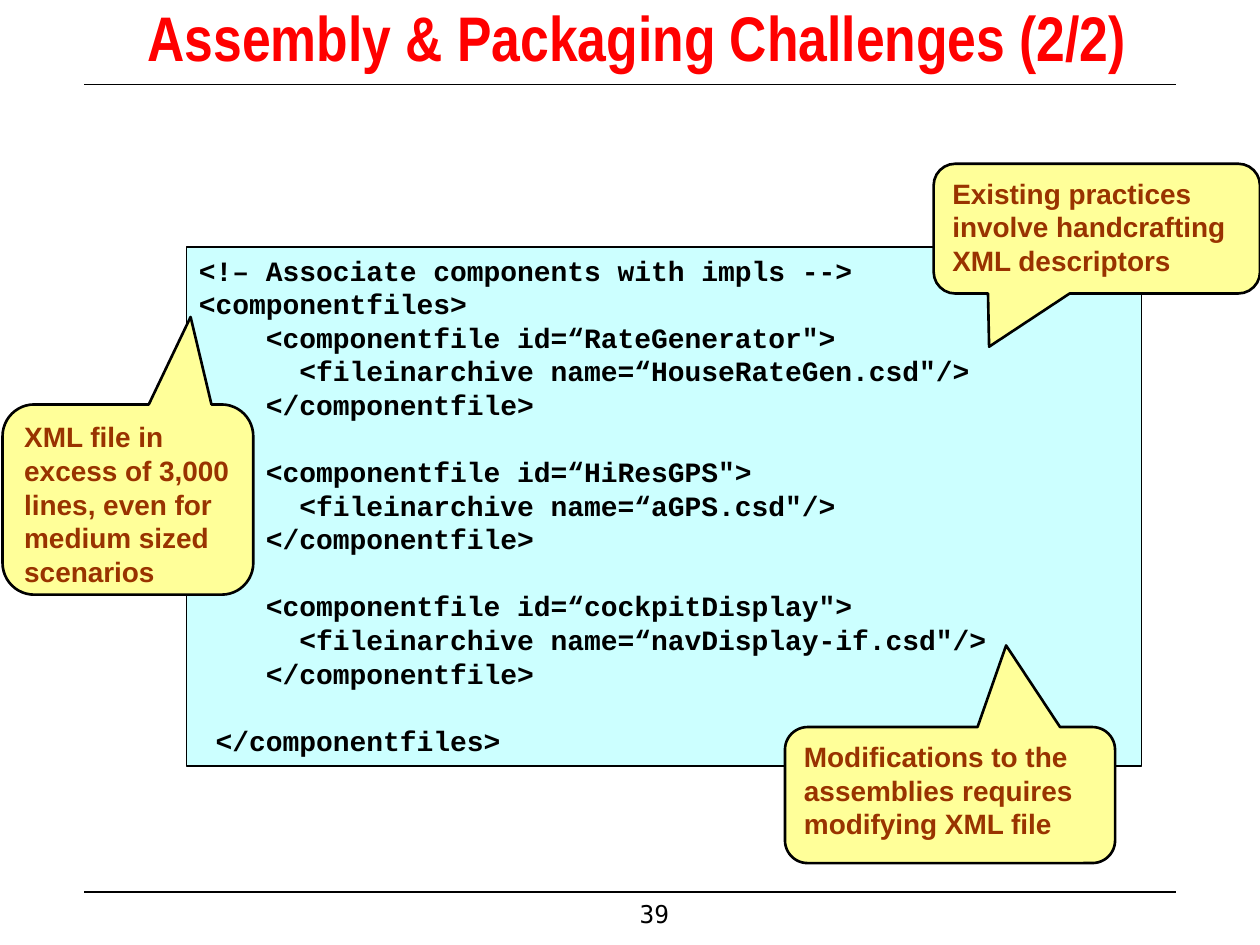
from copy import deepcopy

from lxml import etree
from pptx import Presentation
from pptx import util as u
from pptx.dml.color import RGBColor
from pptx.enum import shapes, text
from pptx.oxml.ns import qn

COLORS = {
    "title": "FF0000",
    "ink": "000000",
    "code_fill": "CCFFFF",
    "note_fill": "FFFF99",
    "note_text": "993300",
}
TITLE = "Assembly & Packaging Challenges (2/2)"
PAGE = "39"
CODE = """<!– Associate components with impls -->
<componentfiles>
    <componentfile id=“RateGenerator">
      <fileinarchive name=“HouseRateGen.csd"/>
    </componentfile>

    <componentfile id=“HiResGPS">
      <fileinarchive name=“aGPS.csd"/>
    </componentfile>

    <componentfile id=“cockpitDisplay">
      <fileinarchive name=“navDisplay-if.csd"/>
    </componentfile>

 </componentfiles>"""
CALLOUTS = [
    ("XML file in excess of 3,000 lines, even for medium sized scenarios",
     (0.02, 3.21, 1.99, 1.51), (0.25, -0.96)),
    ("Existing practices involve handcrafting XML descriptors",
     (7.41, 1.3, 2.59, 1.03), (-0.33, 0.91)),
    ("Modifications to the assemblies requires modifying XML file",
     (6.23, 5.77, 2.62, 1.08), (0.17, -1.1)),
]
RULES = (0.67, 7.08)
RULE_ENDS = (0.67, 9.33)


def rgb(name):
    return RGBColor.from_string(COLORS[name])


def inches(values):
    return [u.Inches(v) for v in values]


def write(sp, content, font="Arial", size=16, color="ink", bold=True,
          align=text.PP_ALIGN.LEFT, anchor=text.MSO_ANCHOR.TOP, spacing=None):
    tf = sp.text_frame
    tf.word_wrap = True
    tf.auto_size = text.MSO_AUTO_SIZE.NONE
    tf.vertical_anchor = anchor
    p = tf.paragraphs[0]
    p.alignment = align
    p.space_before = u.Pt(0)
    if spacing:
        p.line_spacing = u.Pt(spacing)
    p.text = content.replace("\n", "\v")
    for r in p.runs:
        r.font.name = font
        r.font.size = u.Pt(size)
        r.font.bold = bold
        r.font.color.rgb = rgb(color)
    for br in p._p.findall(qn("a:br")):
        br.append(deepcopy(p.runs[0]._r.rPr))


def add_box(slide, kind, place, fill, width):
    sp = slide.shapes.add_shape(kind, *inches(place))
    sp.shadow.inherit = False
    sp.fill.solid()
    sp.fill.fore_color.rgb = rgb(fill)
    sp.line.color.rgb = rgb("ink")
    sp.line.width = u.Pt(width)
    return sp


def add_rule(slide, y):
    left, right = RULE_ENDS
    line = slide.shapes.add_connector(
        shapes.MSO_CONNECTOR.STRAIGHT, *inches((left, y, right, y)))
    line.line.color.rgb = rgb("ink")
    line.line.width = u.Pt(0.75)
    etree.SubElement(line._element.spPr, qn("a:effectLst"))


def main():
    prs = Presentation()
    prs.slide_width, prs.slide_height = inches((10, 7.5))
    s = prs.slides.add_slide(prs.slide_layouts[5])

    for y in RULES:
        add_rule(s, y)

    page = s.shapes.add_textbox(*inches((3.33, 6.92, 2.08, 0.5)))
    write(page, PAGE, font="DejaVu Sans Mono", size=14, bold=False,
          align=text.PP_ALIGN.RIGHT, anchor=text.MSO_ANCHOR.BOTTOM)

    title = s.shapes.title
    title.left, title.top, title.width, title.height = inches((-0.07, 0.08, 10.25, 0.42))
    write(title, TITLE, font="Arial Narrow", size=36, color="title",
          align=text.PP_ALIGN.CENTER, anchor=text.MSO_ANCHOR.MIDDLE)

    code = add_box(s, shapes.MSO_SHAPE.RECTANGLE, (1.48, 1.96, 7.58, 4.12),
                   "code_fill", 0.75)
    write(code, CODE, font="Courier New", spacing=19.2)

    for content, place, tip in CALLOUTS:
        sp = add_box(s, shapes.MSO_SHAPE.ROUNDED_RECTANGULAR_CALLOUT, place,
                     "note_fill", 1.5)
        sp.adjustments[0], sp.adjustments[1] = tip
        write(sp, content, color="note_text", spacing=19.2)

    prs.save("out.pptx")


if __name__ == "__main__":
    main()
